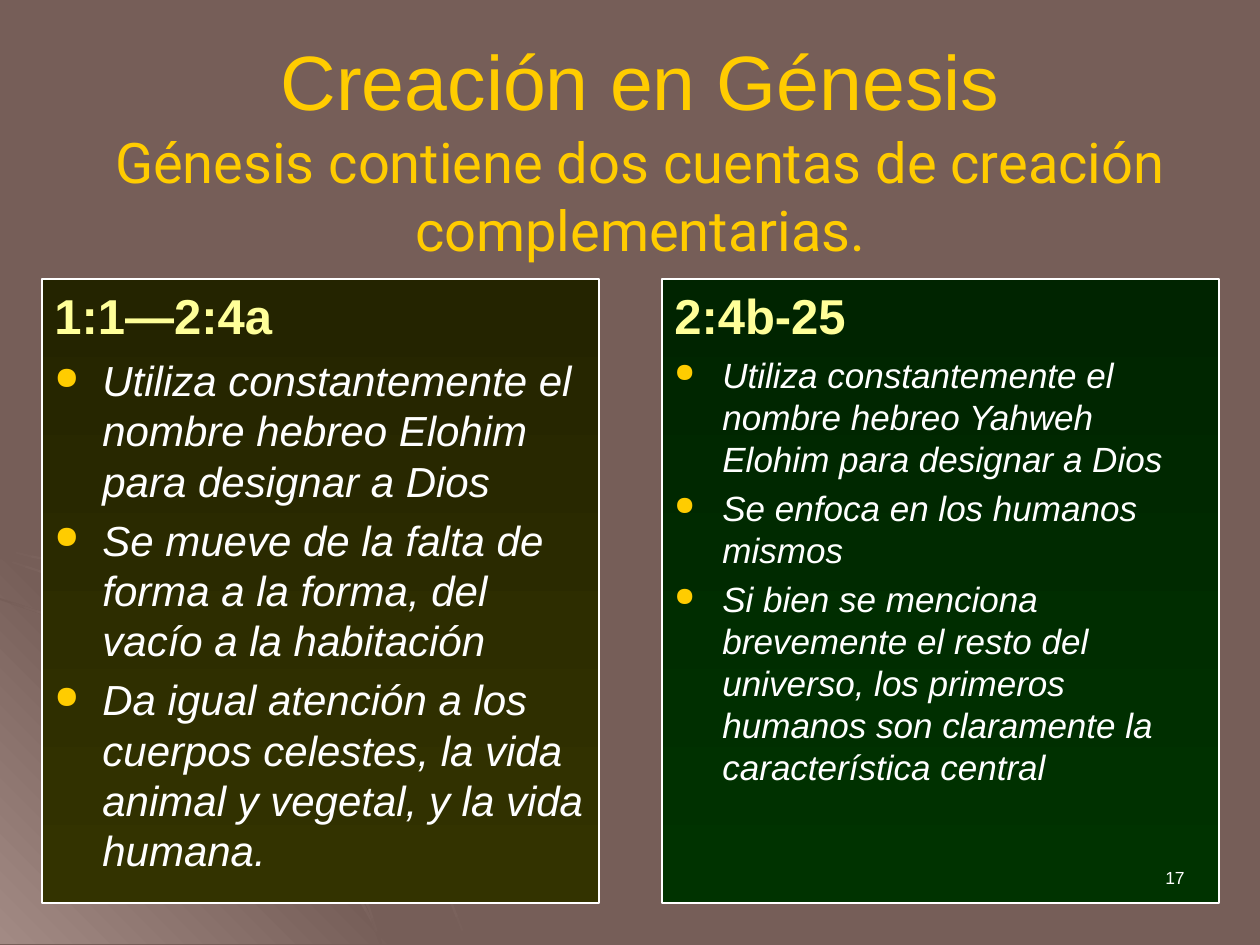
from copy import deepcopy
from dataclasses import dataclass

from pptx import Presentation
from pptx.dml.color import RGBColor as Rgb
from pptx.enum.shapes import MSO_SHAPE as Shape
from pptx.enum.text import MSO_ANCHOR as Anchor, PP_ALIGN as Align
from pptx.oxml.ns import qn
from pptx.oxml.xmlchemy import OxmlElement as Element
from pptx.util import Emu, Pt

SCALE = 914400 / 126
PAGE_WIDTH, PAGE_HEIGHT = 1260, 945


def px(length):
    return Emu(round(length * SCALE))


@dataclass(frozen=True)
class Theme:
    base: str = "765E58"
    light: str = "A28A84"
    gold: str = "FFCC00"
    heading: str = "FFFF99"
    white: str = "FFFFFF"
    olive: tuple = ("242400", "333300")
    green: tuple = ("002400", "003300")
    font: str = "Arial"
    subtitle_font: str = "Roboto"
    title_size: int = 44
    subtitle_size: int = 32
    heading_size: int = 28
    number_size: int = 10


class SlideBuilder:
    def __init__(self, deck, theme):
        self.theme = theme
        self.page = deck.slides.add_slide(deck.slide_layouts[6])
        fill = self.page.background.fill
        fill.solid()
        fill.fore_color.rgb = Rgb.from_string(theme.base)

    def paint(self, shape, colors, angle):
        shape.shadow.inherit = False
        shape.line.fill.background()
        shape.fill.gradient()
        stop_list = shape._element.spPr.find(qn("a:gradFill")).find(qn("a:gsLst"))
        while len(stop_list) < len(colors):
            stop_list.append(deepcopy(stop_list[0]))
        for index, (stop, color) in enumerate(zip(shape.fill.gradient_stops, colors)):
            stop.position = index / (len(colors) - 1)
            stop.color.rgb = Rgb.from_string(color)
        shape.fill.gradient_angle = angle

    def outline(self, points, colors, angle):
        builder = self.page.shapes.build_freeform(*points[0], scale=SCALE)
        builder.add_line_segments(points[1:], close=True)
        self.paint(builder.convert_to_shape(), colors, angle)

    def arc(self, edge):
        inner = [(max(x - 2, 0), min(y + 2, PAGE_HEIGHT - 1)) for x, y in reversed(edge)]
        theme = self.theme
        self.outline(edge + inner, (theme.base, theme.light, theme.base), 315)

    def shape(self, kind, area, colors, angle):
        shape = self.page.shapes.add_shape(kind, *map(px, area))
        self.paint(shape, colors, angle)
        return shape

    def add_text(self, para, text, color, size, font=None, spacing=None, **style):
        span = para.add_run()
        span.text = text
        span.font.color.rgb = Rgb.from_string(color)
        values = {"name": font or self.theme.font, "size": Pt(size), **style}
        for name, value in values.items():
            setattr(span.font, name, value)
        for name, value in (spacing or {}).items():
            setattr(para, name, value)

    def text_box(self, area, **frame_format):
        frame = self.page.shapes.add_textbox(*map(px, area)).text_frame
        for name, value in {"word_wrap": True, **frame_format}.items():
            setattr(frame, name, value)
        return frame

    def title(self, area, heading, subtitle):
        theme = self.theme
        frame = self.text_box(area, margin_top=0, vertical_anchor=Anchor.TOP)
        self.add_text(frame.paragraphs[0], heading, theme.gold, theme.title_size,
                      spacing={"alignment": Align.CENTER})
        self.add_text(frame.add_paragraph(), subtitle, theme.gold, theme.subtitle_size,
                      theme.subtitle_font,
                      {"alignment": Align.CENTER, "line_spacing": Pt(39)})

    def number(self, area, text):
        frame = self.text_box(area)
        self.add_text(frame.paragraphs[0], text, self.theme.white, self.theme.number_size,
                      spacing={"alignment": Align.RIGHT})

    def indent(self, para, bullet=None):
        properties = para._p.get_or_add_pPr()
        properties.set("marL", str(px(48)))
        properties.set("indent", str(-px(48)))
        if bullet is None:
            properties.append(Element("a:buNone"))
            return
        color = Element("a:buClr")
        tint = Element("a:srgbClr")
        tint.set("val", self.theme.gold)
        color.append(tint)
        size = Element("a:buSzPct")
        size.set("val", "75000")
        mark = Element("a:buChar")
        mark.set("char", bullet)
        for element in (color, size, mark):
            properties.append(element)

    def panel(self, area, colors, heading, items, size):
        theme = self.theme
        box = self.shape(Shape.RECTANGLE, area, colors, 270)
        box.line.color.rgb = Rgb.from_string(theme.white)
        box.line.width = Pt(1)
        frame = box.text_frame
        frame.word_wrap = True
        frame.vertical_anchor = Anchor.TOP
        para = frame.paragraphs[0]
        self.add_text(para, heading, theme.heading, theme.heading_size, bold=True,
                      spacing={"alignment": Align.LEFT, "space_after": Pt(1.2),
                               "line_spacing": Pt(theme.heading_size * 1.2)})
        self.indent(para)
        for item in items:
            para = frame.add_paragraph()
            self.add_text(para, item, theme.white, size, italic=True,
                          spacing={"alignment": Align.LEFT, "space_before": Pt(size * 0.2),
                                   "line_spacing": Pt(size * 1.2)})
            self.indent(para, "●")


ARCS = (
    [(0, 548), (35, 556), (72, 563), (123, 578), (171, 601), (219, 626), (263, 656),
     (305, 690), (343, 728), (378, 770), (410, 816), (427, 848), (444, 879),
     (456, 911), (469, 944)],
    [(0, 598), (52, 615), (100, 636), (147, 663), (192, 692), (232, 726), (271, 764),
     (305, 806), (335, 852), (360, 897), (373, 920), (382, 944)],
    [(0, 557), (49, 573), (96, 596), (140, 621), (181, 650), (220, 684), (257, 722),
     (289, 760), (320, 805), (339, 837), (355, 873), (370, 907), (382, 944)],
)
DOTS = ((45, 609, 19, 45), (336, 849, 20, 315), (173, 596, 26, 45))
PANELS = (
    ("olive", "1:1—2:4a", 24, (
        "Utiliza constantemente el nombre hebreo Elohim para designar a Dios",
        "Se mueve de la falta de forma a la forma, del vacío a la habitación",
        "Da igual atención a los cuerpos celestes, la vida animal y vegetal, y la vida humana.",
    )),
    ("green", "2:4b-25", 20, (
        "Utiliza constantemente el nombre hebreo Yahweh Elohim para designar a Dios",
        "Se enfoca en los humanos mismos",
        "Si bien se menciona brevemente el resto del universo, los primeros humanos "
        "son claramente la característica central",
    )),
)


def main():
    deck = Presentation()
    deck.slide_width, deck.slide_height = px(PAGE_WIDTH), px(PAGE_HEIGHT)
    theme = Theme()
    slide = SlideBuilder(deck, theme)

    slide.arc(ARCS[0])
    slide.outline([(406, 944), (0, 944), (0, 538)],
                  (theme.light, theme.base, theme.light), 45)
    for edge in ARCS[1:]:
        slide.arc(edge)
    for left, top, size, angle in DOTS:
        slide.shape(Shape.OVAL, (left, top, size, size), (theme.light, theme.base), angle)

    slide.title((21, 34, 1239, 197), "Creación en Génesis",
                "Génesis contiene dos cuentas de creación complementarias.")
    for column, (tone, heading, size, items) in enumerate(PANELS):
        slide.panel((42 + 620 * column, 279, 557, 624), getattr(theme, tone),
                    heading, items, size)
    slide.number((903, 861, 294, 63), "17")
    deck.save("out.pptx")


if __name__ == "__main__":
    main()
